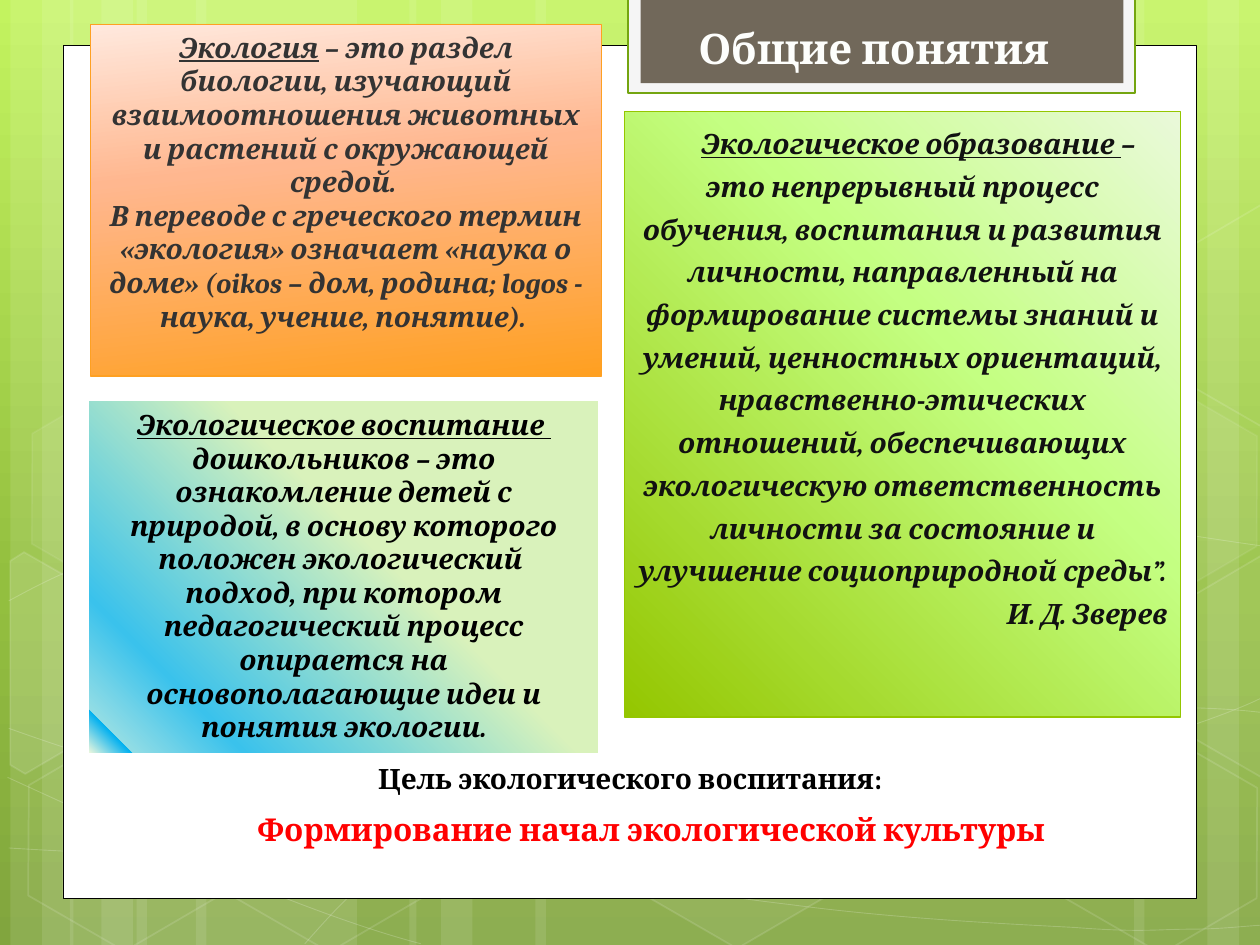
import dataclasses
import math
import typing

import lxml.etree
import pptx
import pptx.dml.color
import pptx.enum.shapes
import pptx.enum.text
import pptx.oxml.ns
import pptx.util

Pt = pptx.util.Pt
qn = pptx.oxml.ns.qn
ALIGN = pptx.enum.text.PP_ALIGN
PRESET = pptx.enum.shapes.MSO_SHAPE
FONT = "Cambria"
WHITE = "FFFFFF"
TILT = 30
Box = tuple[float, float, float, float]
Point = tuple[float, float]


@dataclasses.dataclass
class Line:
    color: str
    width: float
    alpha: float = 100


@dataclasses.dataclass
class Gradient:
    """Stops are (percent, colour); the angle runs clockwise from the right."""
    stops: list[tuple[int, str]]
    angle: float


@dataclasses.dataclass
class Words:
    text: str
    term: str = ""  # underlined opening words
    align: typing.Any = ALIGN.CENTER


@dataclasses.dataclass
class Style:
    color: str
    size: float = 16
    italic: bool = False
    spacing: typing.Optional[float] = None
    indent: float = 0


@dataclasses.dataclass
class Card:
    box: Box
    gradient: Gradient
    line: typing.Optional[Line]
    style: Style
    paragraphs: list[Words]


def rgb(color: str) -> pptx.dml.color.RGBColor:
    return pptx.dml.color.RGBColor.from_string(color)


def add_color(parent, color: str, alpha: float = 100) -> None:
    element = lxml.etree.SubElement(parent, qn("a:srgbClr"), val=color)
    if alpha < 100:
        lxml.etree.SubElement(element, qn("a:alpha"), val=str(round(alpha * 1000)))


def set_solid(fill, owner, color: str, alpha: float) -> None:
    fill.solid()
    fill.fore_color.rgb = rgb(color)
    if alpha < 100:
        solid = owner.find(qn("a:solidFill"))
        solid.clear()
        add_color(solid, color, alpha)


def set_gradient(fill, owner, gradient: Gradient) -> None:
    fill.gradient()
    fill.gradient_angle = 360 - gradient.angle
    stop_list = owner.find(".//" + qn("a:gsLst"))
    stop_list.clear()
    for percent, color in gradient.stops:
        stop = lxml.etree.SubElement(stop_list, qn("a:gs"), pos=str(percent * 1000))
        add_color(stop, color)


def dress(shape, color: typing.Optional[str], line: typing.Optional[Line], alpha: float = 100) -> None:
    """Give a shape its fill and line and take away its shadow."""
    shape.shadow.inherit = False
    properties = shape.element.spPr
    if color:
        set_solid(shape.fill, properties, color, alpha)
    else:
        shape.fill.background()
    if line:
        shape.line.width = Pt(line.width)
        set_solid(shape.line.fill, properties.find(qn("a:ln")), line.color, line.alpha)
    else:
        shape.line.fill.background()


def add_preset(slide, preset, box: Box, color=None, line=None, alpha: float = 100):
    shape = slide.shapes.add_shape(preset, *map(Pt, box))
    dress(shape, color, line, alpha)
    return shape


def add_outline(slide, points: list[Point], closed: bool):
    builder = slide.shapes.build_freeform(*points[0], scale=Pt(1) / 100)
    builder.add_line_segments(points[1:], close=closed)
    return builder.convert_to_shape()


def add_curve(slide, knots: list[Point]) -> None:
    """Draw a chain of cubic curves; each takes three knots after the first."""
    shape = add_outline(slide, [(x * 100, y * 100) for x, y in knots], False)
    segments = list(shape.element.iter(qn("a:lnTo")))
    for start in range(0, len(segments), 3):
        first, *others = segments[start:start + 3]
        first.tag = qn("a:cubicBezTo")
        for segment in others:
            first.append(segment[0])
            segment.getparent().remove(segment)
    dress(shape, None, Line(WHITE, 0.5, 20))


def add_cut_hexagon(slide, center: Point, points: list[Point], alpha: float) -> None:
    """Draw points, given as they appear, as an outline that is tilted about the center."""
    cosine, sine = math.cos(math.radians(TILT)), math.sin(math.radians(TILT))
    offsets = [(x - center[0], y - center[1]) for x, y in points]
    upright = [((center[0] + x * cosine + y * sine) * 100,
                (center[1] - x * sine + y * cosine) * 100) for x, y in offsets]
    shape = add_outline(slide, upright, True)
    shape.rotation = TILT
    dress(shape, WHITE if alpha else None, Line(WHITE, 1, 12), alpha)


def write(frame, paragraphs: list[Words], style: Style, outline: typing.Optional[Line] = None) -> None:
    frame.word_wrap = True
    frame.auto_size = pptx.enum.text.MSO_AUTO_SIZE.NONE
    frame.vertical_anchor = pptx.enum.text.MSO_ANCHOR.TOP
    for index, words in enumerate(paragraphs):
        paragraph = frame.add_paragraph() if index else frame.paragraphs[0]
        paragraph.alignment = words.align
        if style.spacing:
            paragraph.line_spacing = Pt(style.spacing)
        if style.indent:
            paragraph._p.get_or_add_pPr().set("indent", str(Pt(style.indent)))
        font = paragraph.font
        font.name, font.size, font.bold, font.italic = FONT, Pt(style.size), True, style.italic
        font.color.rgb = rgb(style.color)
        for text, underlined in ((words.term, True), (words.text, False)):
            if not text:
                continue
            run = paragraph.add_run()
            run.text = text
            if underlined:
                run.font.underline = True
            if outline:
                stroke = lxml.etree.Element(qn("a:ln"), w=str(Pt(outline.width)))
                add_color(lxml.etree.SubElement(stroke, qn("a:solidFill")), outline.color, outline.alpha)
                run._r.get_or_add_rPr().insert(0, stroke)


def add_text(slide, box: Box, words: Words, style: Style, outline=None) -> None:
    write(slide.shapes.add_textbox(*map(Pt, box)).text_frame, [words], style, outline)


def add_card(slide, card: Card) -> None:
    shape = add_preset(slide, PRESET.RECTANGLE, card.box, line=card.line)
    set_gradient(shape.fill, shape.element.spPr, card.gradient)
    write(shape.text_frame, card.paragraphs, card.style)


STRIPES = [(78, 126), (6, 36), (24, 60), (112, 126), (40, 36), (58, 60),
           (528, 126), (690, 36), (648, 60), (306, 222), (234, 36), (252, 60)]
CURVES = [
    [(5, 484.6), (44, 487), (83, 489), (137, 488), (191, 487), (258, 486), (330, 479),
     (402, 472), (504, 458), (570, 444), (636, 431), (703, 409), (725, 396.7)],
    [(5, 343.4), (26, 332), (47, 321), (87, 310), (128, 299), (186, 284), (250, 279),
     (314, 274), (391, 273), (471, 279), (550, 284), (682, 307), (725, 312.5)],
    [(4.3, 444.2), (91, 484), (178, 523), (240.5, 539.3)],
    [(5, 416.2), (27, 424), (50, 432), (92, 443.5), (134, 454), (197, 472), (257, 484.6),
     (317, 497), (392, 510), (452, 517), (512, 525), (576, 528), (614, 530),
     (652, 533), (662, 531), (680, 531), (699, 531), (712, 529), (725, 528.5)],
    [(174.2, 539.3), (187, 525), (200, 510), (217, 497.5), (235, 485), (259, 470), (279, 460),
     (300, 450), (312, 446), (338, 438.5), (364, 431), (413, 421), (438, 416),
     (464, 411), (467, 411), (490, 409.7), (512, 407), (547, 405), (572, 404.6),
     (597, 404), (638, 404.6), (638, 404.6), (654, 404.6), (670, 404.6), (686, 404.6),
     (699, 405), (711, 406), (718, 406.8), (724, 407.5), (722, 406.8), (724.3, 407.5)],
]
# left, top, fill opacity, line opacity
HEXAGONS = [(240.5, 26, 4, 8), (358, 424, 6, 12), (8, 425.5, 0, 12), (10, 224.5, 7, 8),
            (125, 426, 0, 12), (542, 326, 10, 12), (600.5, 427, 0, 12), (600.5, 226, 7, 8)]
LEFT_PART = [(5.8, 320.4), (13.7, 315.4), (69.1, 347), (68.4, 410.4), (14.4, 442.1), (5.8, 437)]
RIGHT_PART = [(666.7, 349.2), (720.7, 317.5), (726.5, 321.1), (726.5, 441.4), (721.4, 444.2), (666.7, 412.6)]
RIGHT_RISE = 200.5
CARDS = [
    Card((51.7, 13.8, 292, 201), Gradient([(0, "FFE9DE"), (40, "FFB78F"), (100, "FFA021")], 84),
         Line("FEA022", 0.75), Style("333333", italic=True), [
        Words(" – это раздел биологии, изучающий взаимоотношения животных и растений с окружающей средой. ", "Экология"),
        Words("В переводе с греческого термин «экология» означает «наука о доме» (oikos – дом, родина; logos - наука, учение, понятие). ")]),
    Card((357, 63.7, 317.5, 346), Gradient([(0, "EAF9DA"), (40, "C4FF82"), (100, "94C600")], 135),
         Line("94C600", 0.75), Style("111111", italic=True, spacing=24.4, indent=18), [
        Words("– это непрерывный процесс обучения, воспитания и развития личности, направленный на формирование системы знаний и умений, ценностных ориентаций, нравственно-этических отношений, обеспечивающих экологическую ответственность личности за состояние и улучшение социоприродной среды”.", "Экологическое образование "),
        Words("И. Д. Зверев", align=ALIGN.RIGHT)]),
    Card((51, 229.3, 291, 201), Gradient([(43, "D9F2BB"), (82, "3AC2EC"), (95, "93DDE5"), (95, "00B0F0"), (100, "ECF8DE")], 135),
         None, Style("000000", italic=True), [
        Words("", "Экологическое воспитание "),
        Words("дошкольников – это ознакомление детей с природой, в основу которого положен экологический "),
        Words("подход, при котором педагогический процесс опирается на основополагающие идеи и понятия экологии.")]),
]


def draw_backdrop(slide) -> None:
    set_gradient(slide.background.fill, slide.element,
                 Gradient([(0, "C3F35F"), (62, "93BF3F"), (100, "81A53E")], 90))
    for left, width in STRIPES:
        add_preset(slide, PRESET.RECTANGLE, (left, 0, width, 540), WHITE, alpha=10)
    for knots in CURVES:
        add_curve(slide, knots)
    for left, top, alpha, line_alpha in HEXAGONS:
        hexagon = add_preset(slide, PRESET.HEXAGON, (left, top, 126, 109.5),
                             WHITE if alpha else None, Line(WHITE, 1, line_alpha), alpha)
        hexagon.adjustments[0] = 0.285
        hexagon.rotation = TILT
    add_cut_hexagon(slide, (26, 385.2), LEFT_PART, 10)
    for rise, alpha in ((0, 4), (RIGHT_RISE, 0)):
        add_cut_hexagon(slide, (709.2, 374.4 - rise), [(x, y - rise) for x, y in RIGHT_PART], alpha)
    for box, color, line in (((36, 26, 648, 487.2), WHITE, Line("000000", 0.5)),
                             ((359, -1.5, 289.5, 54.5), "F5F5F5", Line("74A510", 1.25)),
                             ((366, -1.5, 276, 49), "71685A", None)):
        add_preset(slide, PRESET.RECTANGLE, box, color, line)


def main() -> None:
    presentation = pptx.Presentation()
    presentation.slide_width, presentation.slide_height = Pt(720), Pt(540)
    slide = presentation.slides.add_slide(presentation.slide_layouts[5])
    draw_backdrop(slide)
    for card in CARDS:
        add_card(slide, card)
    title = slide.shapes.title
    title.left, title.top, title.width, title.height = map(Pt, (388, 9.5, 222.5, 36))
    write(title.text_frame, [Words("Общие понятия")], Style("FDFEFC", 24), Line("94C600", 0.07, 55))
    title.text_frame.word_wrap = False
    title.element.getparent().append(title.element)  # bring in front of the panels
    add_text(slide, (209, 431.4, 313, 26.5), Words("Цель экологического воспитания:", align=ALIGN.LEFT), Style("000000"))
    add_text(slide, (116.3, 459.5, 516, 29), Words("Формирование начал экологической культуры "),
             Style("FF0000", 18), Line("FF0000", 0.75))
    presentation.save("out.pptx")


if __name__ == "__main__":
    main()
